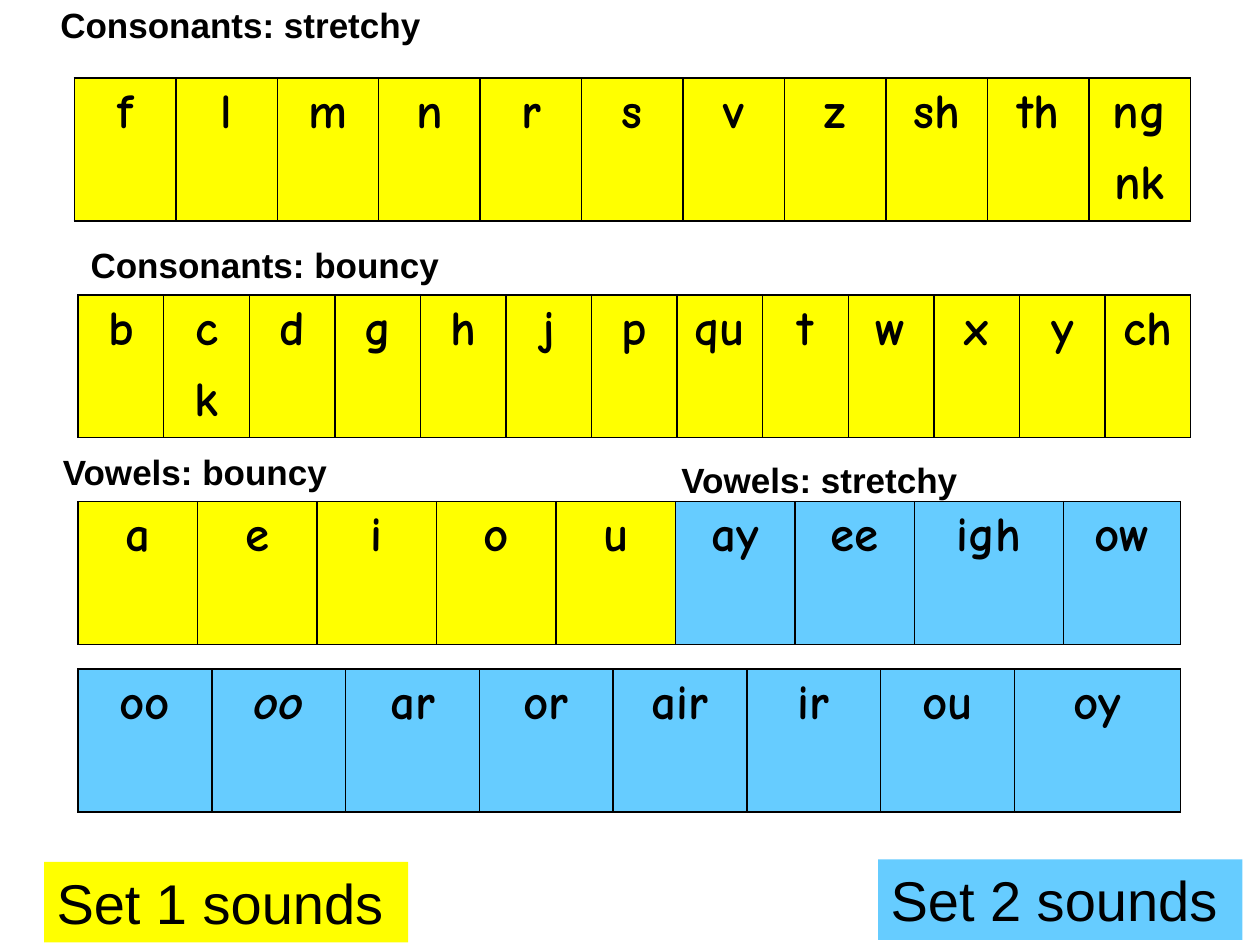
"""Builds a chart of speech sounds: consonants and vowels, stretchy and bouncy, in two sets."""
from lxml import etree
from pptx import Presentation, util as u
from pptx.dml import color
from pptx.enum import shapes, text
from pptx.oxml import ns

COLOURS = {"set 1": "FFFF00", "set 2": "66CCFF", "ink": "000000"}
SOUND = {"name": "Comic Neue", "size": u.Pt(28), "bold": True}
HEADING = {"name": "Arial", "size": u.Pt(20), "bold": True}
KEY = {"name": "Arial", "size": u.Pt(32), "bold": False}

deck = Presentation()
deck.slide_width, deck.slide_height = u.Inches(10), u.Inches(7.5)
COLUMN, ROW = deck.slide_width / 100, deck.slide_height / 100
page = deck.slides.add_slide(deck.slide_layouts[6])


def write(frame, words, font):
    span = frame.paragraphs[0].add_run()
    span.text = words
    for name, value in font.items():
        setattr(span.font, name, value)
    span.font.color.rgb = color.RGBColor.from_string(COLOURS["ink"])


def draw_border(cell, side, visible):
    line = etree.SubElement(cell._tc.get_or_add_tcPr(), ns.qn(f"a:ln{side}"), w=str(u.Pt(1)))
    if visible:
        paint = etree.SubElement(line, ns.qn("a:solidFill"))
        etree.SubElement(paint, ns.qn("a:srgbClr"), val=COLOURS["ink"])
    else:
        etree.SubElement(line, ns.qn("a:noFill"))


tables = [
    (5.9, 8.27, 88.6, {"set 1": "f l m n r s v z sh th ng"}, {10: "nk"}, {}),
    (6.2, 31.2, 88.3, {"set 1": "b c d g h j p qu t w x y ch"}, {1: "k"}, {}),
    (6.2, 53.07, 87.5, {"set 1": "a e i o u", "set 2": "ay ee igh ow"}, {}, {7: 11.8, 8: 9.3}),
    (6.2, 70.8, 87.5, {"set 2": "oo oo ar or air ir ou oy"}, {}, {7: 13.2}),
]
for left, top, width, sets, spellings, wide in tables:
    sounds = [(name, sound) for name, group in sets.items() for sound in group.split()]
    even = (width - sum(wide.values())) / (len(sounds) - len(wide))
    frame = page.shapes.add_table(2, len(sounds), int(left * COLUMN), int(top * ROW),
                                  int(width * COLUMN), int(15.12 * ROW))
    table = frame.table
    table.first_row = table.horz_banding = False
    for index, (name, sound) in enumerate(sounds):
        table.columns[index].width = int(wide.get(index, even) * COLUMN)
        for level, words in enumerate((sound, spellings.get(index, ""))):
            cell = table.cell(level, index)
            for side, visible in {"L": True, "R": True, "T": level == 0, "B": level == 1}.items():
                draw_border(cell, side, visible)
            cell.fill.solid()
            cell.fill.fore_color.rgb = color.RGBColor.from_string(COLOURS[name])
            cell.text_frame.paragraphs[0].alignment = text.PP_ALIGN.CENTER
            if words:
                write(cell.text_frame, words, SOUND)
table.cell(0, 1).text_frame.paragraphs[0].runs[0].font.italic = True

for words, name, left, top in [("Set 1 sounds", "set 1", 3.5, 91.2),
                               ("Set 2 sounds", "set 2", 69.7, 90.93)]:
    box = page.shapes.add_shape(shapes.MSO_SHAPE.RECTANGLE, int(left * COLUMN), int(top * ROW),
                                int(28.9 * COLUMN), int(8.53 * ROW))
    box.shadow.inherit = False
    box.fill.solid()
    box.fill.fore_color.rgb = color.RGBColor.from_string(COLOURS[name])
    box.line.fill.background()
    box.text_frame.word_wrap = True
    box.text_frame.auto_size = text.MSO_AUTO_SIZE.SHAPE_TO_FIT_TEXT
    box.text_frame.vertical_anchor = text.MSO_ANCHOR.TOP
    box.text_frame.paragraphs[0].alignment = text.PP_ALIGN.LEFT
    write(box.text_frame, words, KEY)

for words, left, top, width in [("Consonants: stretchy", 3.8, -0.27, 32.8),
                                ("Vowels: stretchy", 53.1, 47.87, 39.1),
                                ("Consonants: bouncy", 6.2, 25.07, 32.8),
                                ("Vowels: bouncy", 4, 47.07, 39.1)]:
    box = page.shapes.add_textbox(int(left * COLUMN), int(top * ROW),
                                  int(width * COLUMN), int(5.87 * ROW))
    box.text_frame.word_wrap = True
    box.text_frame.auto_size = text.MSO_AUTO_SIZE.SHAPE_TO_FIT_TEXT
    write(box.text_frame, words, HEADING)

deck.save("out.pptx")
